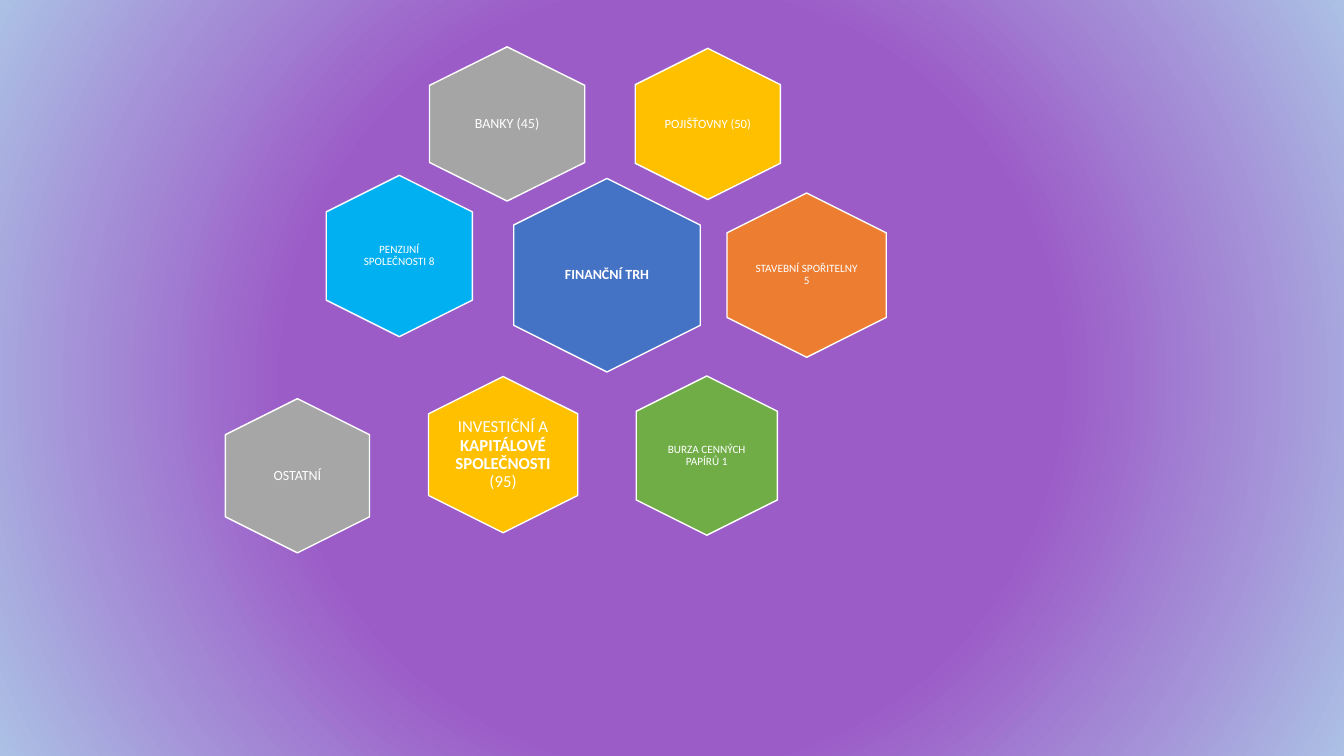
from lxml import etree
from pptx import Presentation
from pptx.dml.color import RGBColor
from pptx.enum.shapes import MSO_SHAPE
from pptx.enum.text import MSO_ANCHOR, PP_ALIGN
from pptx.oxml import parse_xml
from pptx.oxml.ns import nsdecls, qn
from pptx.util import Inches, Pt

HEXAGON = MSO_SHAPE.HEXAGON
MIDDLE = MSO_ANCHOR.MIDDLE
CENTER = PP_ALIGN.CENTER

UNIT = Inches(1)
COLUMNS, ROWS = 13.33, 7.5
BLANK_LAYOUT = 6
FONT = "Calibri"
WHITE = "FFFFFF"
TEXT_SHARE = 0.68
GRADIENT_STOPS = [(50, "9C5CC8"), (100, "ABC0E4"), (100, "C7D5ED")]

# Centre column, centre row, width, height, fill, font size, runs of (text, bold)
INSTITUTIONS = [
    (7.02, 1.23, 1.44, 1.5, "FFC000", 9, [("POJIŠŤOVNY (50)", False)]),
    (5.03, 1.23, 1.54, 1.53, "A5A5A5", 10, [("BANKY (45)", False)]),
    (6.02, 2.73, 1.85, 1.92, "4472C4", 10, [("FINANČNÍ TRH", True)]),
    (8, 2.73, 1.58, 1.63, "ED7D31", 8, [("STAVEBNÍ SPOŘITELNY 5", False)]),
    (7.01, 4.52, 1.4, 1.58, "70AD47", 8, [("BURZA CENNÝCH PAPÍRŮ 1", False)]),
    (2.95, 4.72, 1.43, 1.53, "A6A6A6", 10, [("OSTATNÍ", False)]),
    (3.96, 2.54, 1.45, 1.6, "00B0F0", 8, [("PENZIJNÍ SPOLEČNOSTI 8", False)]),
    (4.99, 4.51, 1.48, 1.55, "FFC000", 12,
     [("INVESTIČNÍ A ", False), ("KAPITÁLOVÉ SPOLEČNOSTI ", True), ("(95)", False)]),
]


def color(hex_string):
    """Return the colour for a hex string."""
    return RGBColor.from_string(hex_string)


def centered_box(column, row, width, height):
    """Return left, top, width and height of a box centred on a grid point."""
    lengths = (column - width / 2, row - height / 2, width, height)
    return [round(length * UNIT) for length in lengths]


def set_radial_background(slide):
    """Fill the background with a gradient spreading from the centre."""
    slide.background.fill.gradient()
    gradient = slide.element.find(".//" + qn("a:gradFill"))
    for child in list(gradient):
        gradient.remove(child)
    stop_list = etree.SubElement(gradient, qn("a:gsLst"))
    for position, hex_string in GRADIENT_STOPS:
        stop = etree.SubElement(stop_list, qn("a:gs"), pos=str(position * 1000))
        etree.SubElement(stop, qn("a:srgbClr"), val=hex_string)
    gradient.append(parse_xml(
        f'<a:path {nsdecls("a")} path="circle">'
        '<a:fillToRect l="50000" t="50000" r="50000" b="50000"/></a:path>'))


def add_hexagon(shapes, column, row, width, height, fill):
    """Add a hexagon standing on its point."""
    shape = shapes.add_shape(HEXAGON, *centered_box(column, row, height, width))
    shape.rotation = 90
    shape.adjustments[0] = 0.25
    shape.shadow.inherit = False
    shape.fill.solid()
    shape.fill.fore_color.rgb = color(fill)
    shape.line.color.rgb = color(WHITE)
    shape.line.width = Pt(1)


def add_label(shapes, column, row, width, height, size, runs):
    """Add upright text in the middle of a hexagon."""
    box = centered_box(column, row, width * TEXT_SHARE, height * TEXT_SHARE)
    frame = shapes.add_textbox(*box).text_frame
    frame.word_wrap = True
    frame.vertical_anchor = MIDDLE
    frame.margin_left = frame.margin_right = 0
    frame.margin_top = frame.margin_bottom = 0
    paragraph = frame.paragraphs[0]
    paragraph.alignment = CENTER
    paragraph.line_spacing = 0.9
    paragraph.font.name = FONT
    paragraph.font.size = Pt(size)
    paragraph.font.color.rgb = color(WHITE)
    for text, bold in runs:
        run = paragraph.add_run()
        run.text = text
        run.font.bold = bold


def main():
    """Build the slide of financial market institutions."""
    presentation = Presentation()
    presentation.slide_width = round(COLUMNS * UNIT)
    presentation.slide_height = round(ROWS * UNIT)
    slide = presentation.slides.add_slide(presentation.slide_layouts[BLANK_LAYOUT])
    set_radial_background(slide)
    shapes = slide.shapes.add_group_shape().shapes
    for column, row, width, height, fill, size, runs in INSTITUTIONS:
        add_hexagon(shapes, column, row, width, height, fill)
        add_label(shapes, column, row, width, height, size, runs)
    presentation.save("out.pptx")


if __name__ == "__main__":
    main()
